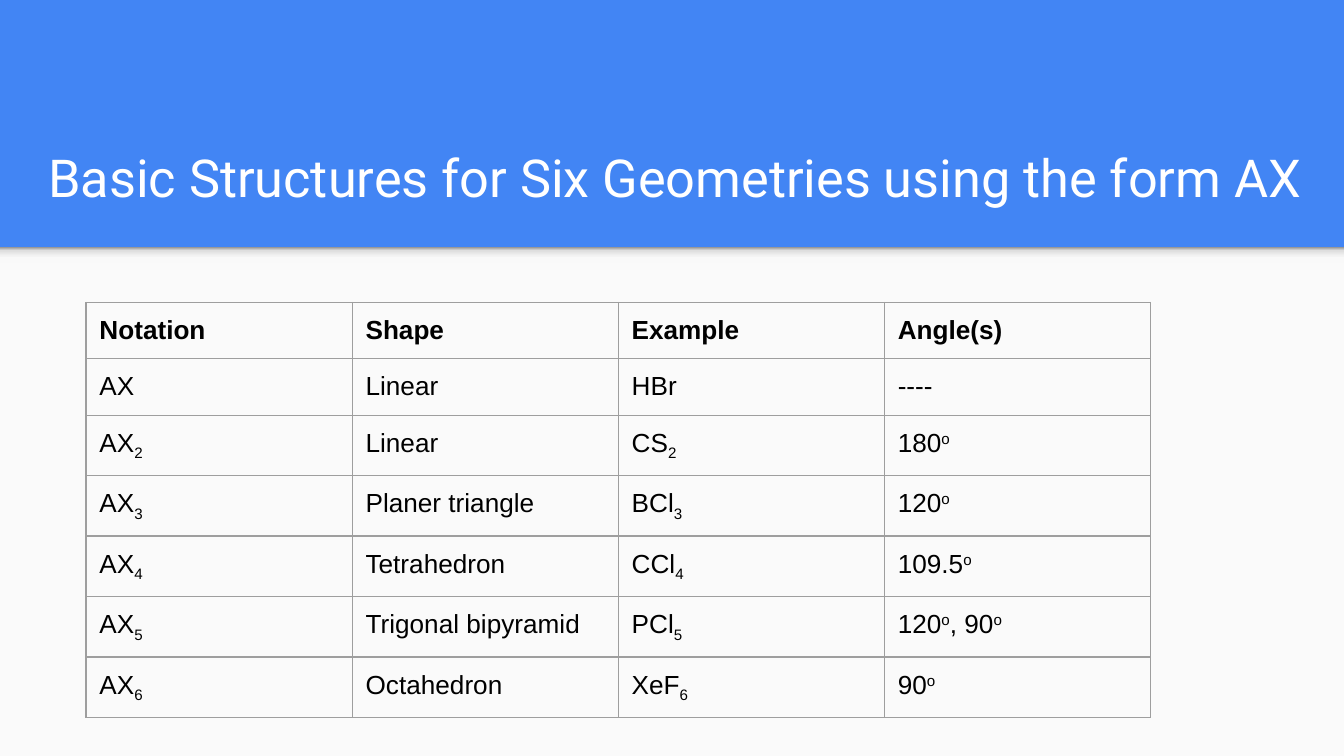
"""Build a slide that tabulates the six basic molecular geometries."""
from copy import deepcopy

from lxml.etree import SubElement
from pptx import Presentation
from pptx.dml.color import RGBColor
from pptx.enum.shapes import MSO_SHAPE
from pptx.enum.text import MSO_ANCHOR, MSO_AUTO_SIZE, PP_ALIGN
from pptx.oxml.ns import qn
from pptx.util import Inches, Pt

BLUE = RGBColor(0x42, 0x85, 0xF4)
PAPER = RGBColor(0xFA, 0xFA, 0xFA)
WHITE = RGBColor(0xFF, 0xFF, 0xFF)
BLACK = RGBColor(0x00, 0x00, 0x00)
BORDER = RGBColor(0x9E, 0x9E, 0x9E)
SHADE_LIGHT = RGBColor(0xF9, 0xF9, 0xF9)
SHADE_MID = RGBColor(0xDE, 0xDE, 0xDE)
SHADE_DARK = RGBColor(0x99, 0x99, 0x99)

SHADE_STOPS = [(0, SHADE_LIGHT), (0.36, SHADE_LIGHT), (0.8, SHADE_MID), (1, SHADE_DARK)]
BASELINES = {"_": -25000, "^": 30000}
GEOMETRIES = [
    ("Notation", "Shape", "Example", "Angle(s)"),
    ("AX", "Linear", "HBr", "----"),
    ("AX_2", "Linear", "CS_2", "180^o"),
    ("AX_3", "Planer triangle", "BCl_3", "120^o"),
    ("AX_4", "Tetrahedron", "CCl_4", "109.5^o"),
    ("AX_5", "Trigonal bipyramid", "PCl_5", "120^o, 90^o"),
    ("AX_6", "Octahedron", "XeF_6", "90^o"),
]


def split_baselines(text):
    """Split text into (part, baseline) pairs; _ lowers and ^ raises the next character."""
    parts, plain, letters = [], "", iter(text)
    for letter in letters:
        if letter not in BASELINES:
            plain += letter
            continue
        parts += [(plain, 0), (next(letters), BASELINES[letter])]
        plain = ""
    return parts + [(plain, 0)] if plain else parts


def write_text(frame, text, font="Arial", size=14, color=BLACK, bold=False):
    """Write one left-aligned paragraph with sub- and superscripts."""
    paragraph = frame.paragraphs[0]
    paragraph.alignment = PP_ALIGN.LEFT
    for part, baseline in split_baselines(text):
        run = paragraph.add_run()
        run.text = part
        run.font.name = font
        run.font.size = Pt(size)
        run.font.bold = bold
        run.font.color.rgb = color
        if baseline:
            run.font._element.set("baseline", str(baseline))


class SlideBuilder:
    """Hold the style and the current slide."""

    inset = Inches(0.1)
    border_width = Pt(0.75)

    def __init__(self, slide):
        """Start on a slide with the blue background."""
        self.slide = slide
        slide.background.fill.solid()
        slide.background.fill.fore_color.rgb = BLUE

    def set_insets(self, target):
        """Give a frame or cell the same inset on every side."""
        target.margin_left = target.margin_right = self.inset
        target.margin_top = target.margin_bottom = self.inset

    def add_panel(self, left, top, width, height, color=PAPER):
        """Add a plain rectangle without outline."""
        panel = self.slide.shapes.add_shape(
            MSO_SHAPE.RECTANGLE, Inches(left), Inches(top), Inches(width), Inches(height))
        panel.shadow.inherit = False
        panel.line.fill.background()
        panel.fill.solid()
        panel.fill.fore_color.rgb = color
        return panel

    def add_shade(self, left, top, width, height, stops):
        """Add a rectangle that fades from its bottom to its top."""
        shade = self.add_panel(left, top, width, height)
        shade.fill.gradient()
        shade.fill.gradient_angle = 90
        stop_list = shade._element.spPr.find(qn("a:gradFill")).find(qn("a:gsLst"))
        for _ in stops[len(stop_list):]:
            stop_list.append(deepcopy(stop_list[0]))
        for stop, (position, color) in zip(shade.fill.gradient_stops, stops):
            stop.position = position
            stop.color.rgb = color

    def set_title(self, text, left, top, width, height):
        """Place and fill the title placeholder."""
        title = self.slide.shapes.title
        title.left, title.top = Inches(left), Inches(top)
        title.width, title.height = Inches(width), Inches(height)
        frame = title.text_frame
        frame.word_wrap = True
        frame.auto_size = MSO_AUTO_SIZE.NONE
        frame.vertical_anchor = MSO_ANCHOR.BOTTOM
        self.set_insets(frame)
        write_text(frame, text, font="Roboto", size=28, color=WHITE)

    def set_borders(self, cell):
        """Draw a thin line on all four sides of a cell."""
        properties = cell._tc.get_or_add_tcPr()
        for side in ("a:lnL", "a:lnR", "a:lnT", "a:lnB"):
            line = SubElement(properties, qn(side), w=str(self.border_width))
            fill = SubElement(line, qn("a:solidFill"))
            SubElement(fill, qn("a:srgbClr"), val=str(BORDER))

    def add_table(self, rows, left, top, column_width, row_height):
        """Add a bordered table with a bold first row."""
        columns = len(rows[0])
        table = self.slide.shapes.add_table(
            len(rows), columns, Inches(left), Inches(top),
            Inches(column_width * columns), Inches(row_height * len(rows))).table
        table.first_row = table.horz_banding = False
        for column in table.columns:
            column.width = Inches(column_width)
        for row_index, row in enumerate(rows):
            table.rows[row_index].height = Inches(row_height)
            for column_index, text in enumerate(row):
                cell = table.cell(row_index, column_index)
                self.set_insets(cell)
                self.set_borders(cell)
                cell.fill.background()
                write_text(cell.text_frame, text, bold=row_index == 0)


def main():
    """Build and save the slide."""
    presentation = Presentation()
    presentation.slide_width = Inches(10)
    presentation.slide_height = presentation.slide_width * 9 // 16
    title_only = presentation.slide_layouts[5]
    builder = SlideBuilder(presentation.slides.add_slide(title_only))
    builder.add_panel(0, 1.84, 10, 3.79)
    builder.add_shade(0, 1.84, 10, 0.12, SHADE_STOPS)
    builder.set_title("Basic Structures for Six Geometries using the form AX", 0.26, 0.81, 9.67, 0.84)
    builder.add_table(GEOMETRIES, 0.64, 2.25, column_width=1.98, row_height=0.42)
    presentation.save("out.pptx")


if __name__ == "__main__":
    main()
